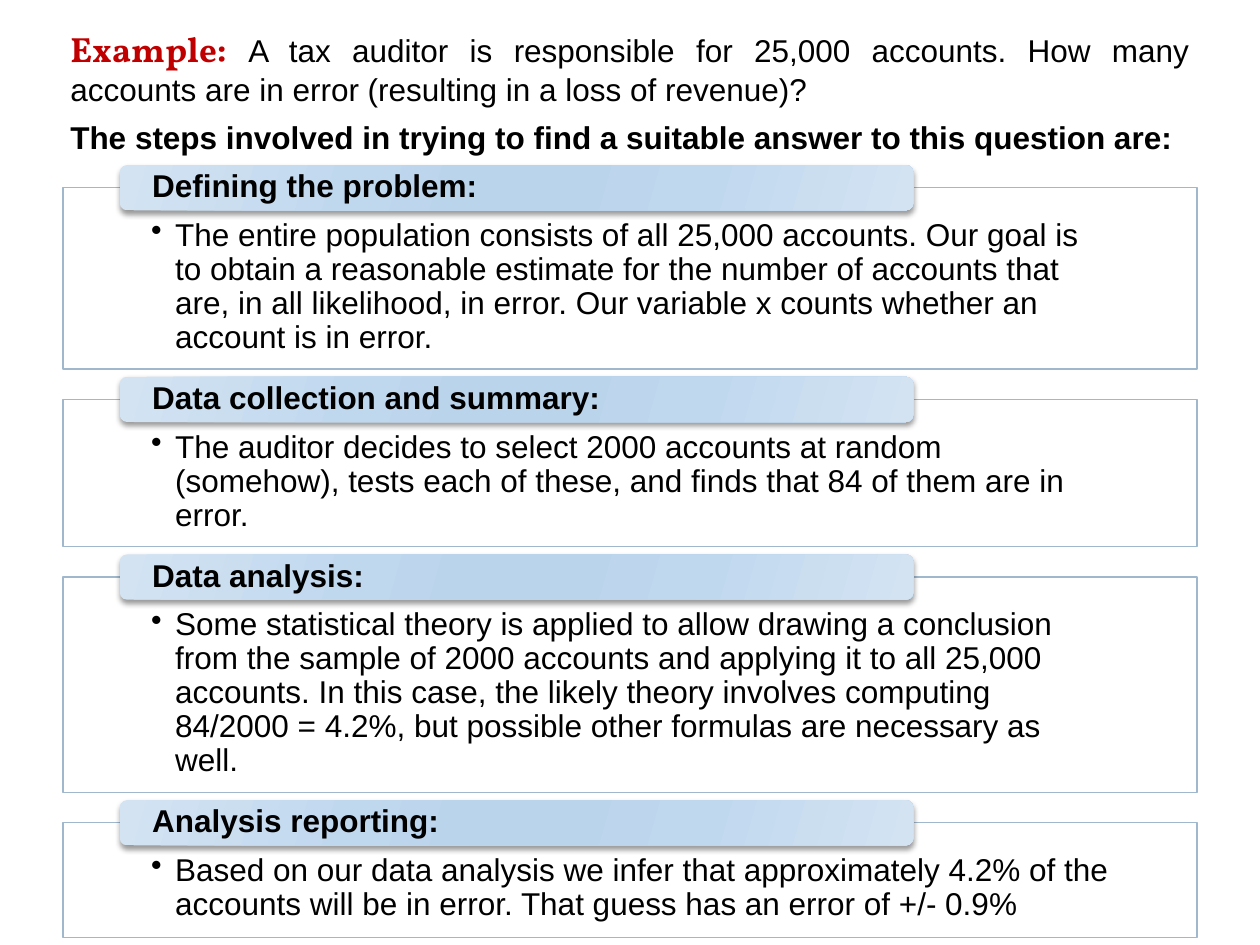
import pptx
import pptx.dml.color
import pptx.enum.shapes
import pptx.enum.text
import pptx.oxml
import pptx.oxml.ns
import pptx.util
from lxml import etree

RGBColor = pptx.dml.color.RGBColor
BLACK = RGBColor(0x00, 0x00, 0x00)
WHITE = RGBColor(0xFF, 0xFF, 0xFF)
RED = RGBColor(0xC0, 0x00, 0x00)
BORDER = RGBColor(0x9F, 0xB8, 0xCD)
PALE = RGBColor(0xD3, 0xE3, 0xF2)
LIGHT = RGBColor(0xC0, 0xD8, 0xEE)
MID = RGBColor(0xBA, 0xD4, 0xEC)
GRADIENT = [(0, PALE), (30, LIGHT), (45, MID), (55, MID), (73, LIGHT), (100, PALE)]

WIDTH, HEIGHT = pptx.util.Inches(10), pptx.util.Inches(7.5)

# Percent of slide width (x) and slide height (y)
BOX_LEFT, BOX_WIDTH = 5, 90
HEADER_LEFT = BOX_LEFT + 0.05 * BOX_WIDTH
HEADER_WIDTH = 0.7 * BOX_WIDTH
HEADER_HEIGHT = 4.8
FIRST_TOP, GAP = 19.87, 3.2

# Heading, explanation, box height
STEPS = [
    ("Defining the problem:",
     "The entire population consists of all 25,000 accounts. Our goal is to obtain "
     "a reasonable estimate for the number of accounts that are, in all likelihood, "
     "in error. Our variable x counts whether an account is in error.", 19.2),
    ("Data collection and summary:",
     "The auditor decides to select 2000 accounts at random (somehow), tests each of "
     "these, and finds that 84 of them are in error.", 15.6),
    ("Data analysis:",
     "Some statistical theory is applied to allow drawing a conclusion from the sample "
     "of 2000 accounts and applying it to all 25,000 accounts. In this case, the likely "
     "theory involves computing 84/2000 = 4.2%, but possible other formulas are "
     "necessary as well.", 22.8),
    ("Analysis reporting:",
     "Based on our data analysis we infer that approximately 4.2% of the accounts will "
     "be in error. That guess has an error of +/- 0.9%", 12.13),
]


def place(left, top, width, height):
    """Turn percentages of the slide into lengths."""
    return (int(WIDTH * left / 100), int(HEIGHT * top / 100),
            int(WIDTH * width / 100), int(HEIGHT * height / 100))


def add_xml(parent, tag, **attributes):
    return etree.SubElement(parent, pptx.oxml.ns.qn(tag), attributes)


def add_span(para, text, size=18, font="Arial", color=BLACK, bold=False):
    span = para.add_run()
    span.text = text
    span.font.size = pptx.util.Pt(size)
    span.font.name = font
    span.font.color.rgb = color
    span.font.bold = bold


def add_shape(page, kind, position, insets, anchor):
    """Add a shape without shadow, ready for left-aligned text."""
    shape = page.shapes.add_shape(kind, *position)
    shape.shadow.inherit = False
    frame = shape.text_frame
    frame.word_wrap = True
    frame.vertical_anchor = anchor
    (frame.margin_left, frame.margin_top,
     frame.margin_right, frame.margin_bottom) = map(pptx.util.Inches, insets)
    para = frame.paragraphs[0]
    para.alignment = pptx.enum.text.PP_ALIGN.LEFT
    para.line_spacing = 0.9
    return shape, para


def add_bullet(para):
    properties = para._p.get_or_add_pPr()
    indent = pptx.util.Inches(0.19)
    properties.set("marL", str(indent))
    properties.set("indent", str(-indent))
    add_xml(properties, "a:buChar", char="•")


def add_explanation(page, text, top, height):
    box, para = add_shape(page, pptx.enum.shapes.MSO_SHAPE.RECTANGLE,
                          place(BOX_LEFT, top, BOX_WIDTH, height),
                          (0.7, 0.25, 0.7, 0.14), pptx.enum.text.MSO_ANCHOR.TOP)
    box.fill.solid()
    box.fill.fore_color.rgb = WHITE
    color = box._element.spPr.find(".//" + pptx.oxml.ns.qn("a:srgbClr"))
    add_xml(color, "a:alpha", val="90000")
    box.line.color.rgb = BORDER
    box.line.width = pptx.util.Pt(0.75)
    add_bullet(para)
    add_span(para, text)


def add_header(page, text, middle):
    position = place(HEADER_LEFT, middle - HEADER_HEIGHT / 2, HEADER_WIDTH, HEADER_HEIGHT)
    header, para = add_shape(page, pptx.enum.shapes.MSO_SHAPE.ROUNDED_RECTANGLE, position,
                             (0.24, 0, 0.24, 0), pptx.enum.text.MSO_ANCHOR.MIDDLE)
    header.line.fill.background()
    header.fill.gradient()
    header.fill.gradient_angle = 360 - 16
    properties = header._element.spPr

    # Gradient stops
    stops = properties.find(".//" + pptx.oxml.ns.qn("a:gsLst"))
    for stop in list(stops):
        stops.remove(stop)
    for percent, color in GRADIENT:
        stop = add_xml(stops, "a:gs", pos=str(percent * 1000))
        add_xml(stop, "a:srgbClr", val=str(color))

    # Soft shadow below
    effects = properties.find(pptx.oxml.ns.qn("a:effectLst"))
    shadow = add_xml(effects, "a:outerShdw", blurRad=str(pptx.util.Pt(3)),
                     dist=str(pptx.util.Pt(2)), dir=str(90 * 60000), rotWithShape="0")
    add_xml(add_xml(shadow, "a:srgbClr", val=str(BLACK)), "a:alpha", val="40000")
    add_span(para, text, bold=True)


def add_intro(page):
    frame = page.shapes.add_textbox(*place(4.6, 2.27, 90.8, 12.27)).text_frame
    frame.word_wrap = True
    example, lead = frame.paragraphs[0], frame.add_paragraph()
    for para in (example, lead):
        para.alignment = pptx.enum.text.PP_ALIGN.JUSTIFY
        para.space_before = pptx.util.Pt(6)
    add_span(example, "Example:", size=20, font="Vollkorn", color=RED, bold=True)
    add_span(example, " ", bold=True)
    add_span(example, "A tax auditor is responsible for 25,000 accounts. How many accounts "
                      "are in error (resulting in a loss of revenue)?")
    add_span(lead, "The steps involved in trying to find a suitable answer to this "
                   "question are:", bold=True)


def main():
    deck = pptx.Presentation()
    deck.slide_width, deck.slide_height = WIDTH, HEIGHT
    page = deck.slides.add_slide(deck.slide_layouts[6])

    # Steps, stacked with equal gaps
    top = FIRST_TOP
    for heading, explanation, height in STEPS:
        add_explanation(page, explanation, top, height)
        add_header(page, heading, top)
        top += height + GAP

    # Question above the steps
    add_intro(page)
    deck.save("out.pptx")


if __name__ == "__main__":
    main()
